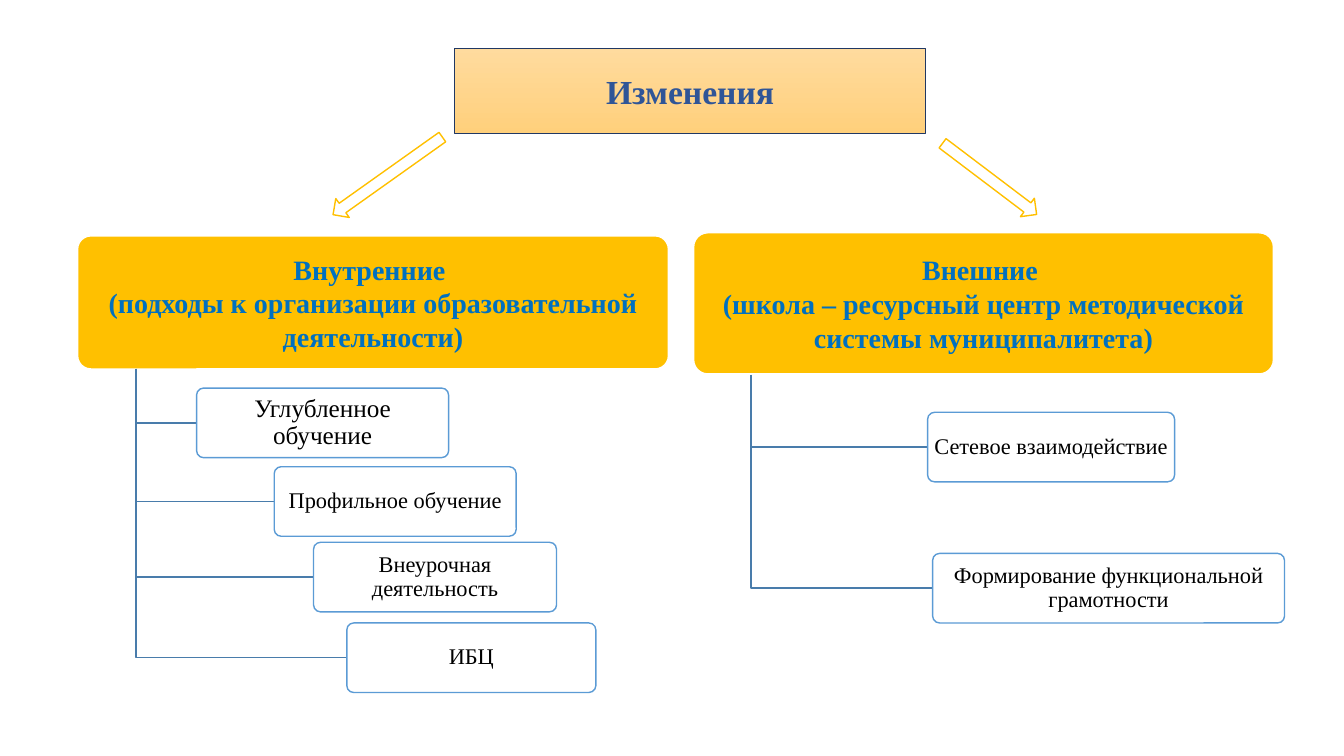
from lxml import etree
from pptx import Presentation
from pptx.dml.color import RGBColor
from pptx.enum.shapes import MSO_SHAPE as Shape
from pptx.enum.text import MSO_ANCHOR as Anchor, PP_ALIGN as Align
from pptx.oxml.ns import qn
from pptx.util import Inches, Pt

FONT = "Times New Roman"
AMBER = "FFC000"
WHITE = "FFFFFF"
ITEM_HEIGHT = 0.69

BRANCHES = [
    {
        "box": (0.77, 2.34, 5.86, 1.32),
        "heading": ["Внутренние ",
                    "(подходы к организации образовательной деятельности)"],
        "trunk": (1.35, 3.66),
        "items": [
            ("Углубленное обучение", 1.95, 3.85, 2.5, 18),
            ("Профильное обучение", 2.72, 4.63, 2.4, 16),
            ("Внеурочная деятельность", 3.11, 5.38, 2.41, 16),
            ("ИБЦ", 3.44, 6.18, 2.47, 16),
        ],
    },
    {
        "box": (6.88, 2.31, 5.75, 1.4),
        "heading": ["Внешние ",
                    "(школа – ресурсный центр методической системы муниципалитета)"],
        "trunk": (7.45, 3.72),
        "items": [
            ("Сетевое взаимодействие", 9.2, 4.09, 2.45, 16),
            ("Формирование функциональной грамотности", 9.25, 5.49, 3.49, 16),
        ],
    },
]

ARROWS = [(9.23, 1.66, 1.17, 37.1), (3.18, 1.63, 1.33, 144.6)]


def color(value):
    return RGBColor.from_string(value)


def set_line(shape, value, width=1):
    shape.line.color.rgb = color(value)
    shape.line.width = Pt(width)


def write_text(shape, lines, size, text_color, bold=False, spacing=1.0):
    frame = shape.text_frame
    frame.word_wrap = True
    frame.vertical_anchor = Anchor.MIDDLE
    for index, line in enumerate(lines):
        paragraph = frame.paragraphs[0] if index == 0 else frame.add_paragraph()
        paragraph.alignment = Align.CENTER
        paragraph.line_spacing = spacing
        run = paragraph.add_run()
        run.text = line
        run.font.name = FONT
        run.font.size = Pt(size)
        run.font.bold = bold
        run.font.color.rgb = color(text_color)


def add_filled_shape(slide, kind, box, fill, line):
    shape = slide.shapes.add_shape(kind, *map(Inches, box))
    shape.shadow.inherit = False
    shape.fill.solid()
    shape.fill.fore_color.rgb = color(fill)
    set_line(shape, line)
    return shape


def add_rounded_box(slide, box, fill, line, inset):
    shape = add_filled_shape(slide, Shape.ROUNDED_RECTANGLE, box, fill, line)
    shape.adjustments[0] = 0.1
    frame = shape.text_frame
    frame.margin_left = frame.margin_right = Inches(inset)
    frame.margin_top = frame.margin_bottom = Inches(inset - 0.01)
    return shape


def add_elbow(slide, trunk, end):
    x, y = map(Inches, trunk)
    end_x, end_y = map(Inches, end)
    builder = slide.shapes.build_freeform(x, y)
    builder.add_line_segments([(x, end_y), (end_x, end_y)], close=False)
    elbow = builder.convert_to_shape()
    elbow.shadow.inherit = False
    elbow.fill.background()
    set_line(elbow, "497CAB")


def add_item(slide, text, left, top, width, size):
    box = (left, top, width, ITEM_HEIGHT)
    shape = add_rounded_box(slide, box, WHITE, "5B9BD5", 0.03)
    fill_color = shape.element.spPr.find(f"{qn('a:solidFill')}/{qn('a:srgbClr')}")
    etree.SubElement(fill_color, qn("a:alpha"), val="90000")
    write_text(shape, [text], size, "000000", spacing=0.9)


def add_branch(slide, branch):
    heading = add_rounded_box(slide, branch["box"], AMBER, WHITE, 0.04)
    write_text(heading, branch["heading"], 20, "0070C0", bold=True)
    for text, left, top, width, size in branch["items"]:
        add_elbow(slide, branch["trunk"], (left, top + ITEM_HEIGHT / 2))
        add_item(slide, text, left, top, width, size)


def add_arrow(slide, left, top, width, rotation):
    box = (left, top, width, 0.23)
    arrow = add_filled_shape(slide, Shape.RIGHT_ARROW, box, WHITE, AMBER)
    arrow.rotation = rotation


def format_title(title):
    title.left, title.top = Inches(4.51), Inches(0.48)
    title.width, title.height = Inches(4.67), Inches(0.84)
    title.fill.gradient()
    title.fill.gradient_angle = 270
    for stop, value in zip(title.fill.gradient_stops, ("FFDB9E", "FFD07C")):
        stop.color.rgb = color(value)
    set_line(title, "203864", 0.5)
    write_text(title, ["Изменения"], 24, "2F5597", bold=True)


def main():
    presentation = Presentation()
    presentation.slide_width = Inches(13.33)
    presentation.slide_height = Inches(7.5)
    slide = presentation.slides.add_slide(presentation.slide_layouts[5])
    format_title(slide.shapes.title)
    for branch in BRANCHES:
        add_branch(slide, branch)
    for arrow in ARROWS:
        add_arrow(slide, *arrow)
    presentation.save("out.pptx")


if __name__ == "__main__":
    main()
